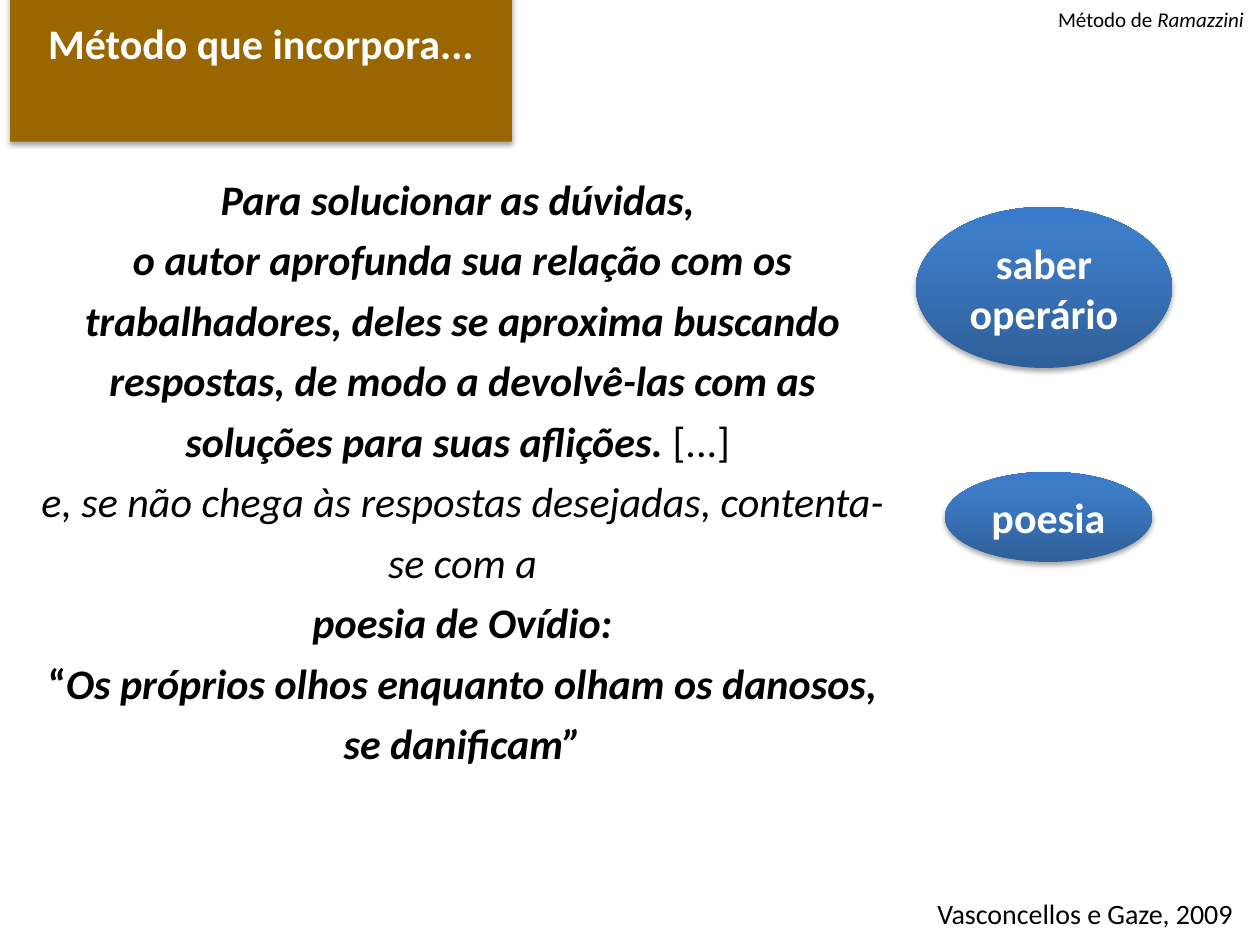
from dataclasses import dataclass

from pptx import Presentation
from pptx.dml.color import RGBColor
from pptx.enum.shapes import MSO_SHAPE
from pptx.enum.text import MSO_ANCHOR, MSO_AUTO_SIZE, PP_ALIGN
from pptx.oxml import parse_xml
from pptx.oxml.ns import nsdecls
from pptx.util import Emu, Pt


@dataclass(frozen=True)
class Theme:
    font: str = "Calibri"
    ink: str = "000000"
    on_fill: str = "FFFFFF"
    banner: str = "996600"
    gradient: tuple = ((0, "2F5F99"), (80, "3D7CC7"), (100, "3A7CCB"))
    main_size: int = 24
    source_size: int = 16
    header_size: int = 12
    line_spacing: float = 1.2
    space_after: int = 6


def px(length):
    return Emu(round(length * 914400 / 126))


class SlideBuilder:
    def __init__(self, slide, theme):
        self.slide = slide
        self.theme = theme

    def fill_text(self, frame, paragraphs, size, color, align, spacing=1.0, after=0, wrap=True):
        frame.word_wrap = wrap
        frame.auto_size = MSO_AUTO_SIZE.SHAPE_TO_FIT_TEXT
        for index, runs in enumerate(paragraphs):
            paragraph = frame.add_paragraph() if index else frame.paragraphs[0]
            paragraph.alignment = align
            paragraph.line_spacing = spacing
            paragraph.space_before = Pt(0)
            paragraph.space_after = Pt(after)
            for words, style in runs:
                run = paragraph.add_run()
                run.text = words
                run.font.name = self.theme.font
                run.font.size = Pt(size)
                run.font.color.rgb = RGBColor.from_string(color)
                run.font.bold = "b" in style
                run.font.italic = "i" in style

    def text(self, box, paragraphs, size, align=PP_ALIGN.CENTER, spacing=1.0, wrap=True):
        frame = self.slide.shapes.add_textbox(*map(px, box)).text_frame
        self.fill_text(frame, paragraphs, size, self.theme.ink, align, spacing, wrap=wrap)

    def label(self, shape, words):
        shape.line.fill.background()
        shape.element.spPr.append(parse_xml(
            f'<a:effectLst {nsdecls("a")}><a:outerShdw blurRad="39370" dist="22860" '
            'dir="5400000" rotWithShape="0"><a:srgbClr val="000000">'
            '<a:alpha val="35000"/></a:srgbClr></a:outerShdw></a:effectLst>'))
        shape.text_frame.vertical_anchor = MSO_ANCHOR.MIDDLE
        self.fill_text(shape.text_frame, [[(words, "b")]], self.theme.main_size,
                       self.theme.on_fill, PP_ALIGN.CENTER, after=self.theme.space_after)

    def title(self, box, words):
        title = self.slide.shapes.title
        title.left, title.top, title.width, title.height = map(px, box)
        title.element.spPr.append(parse_xml(
            f'<a:prstGeom {nsdecls("a")} prst="roundRect"><a:avLst/></a:prstGeom>'))
        title.fill.solid()
        title.fill.fore_color.rgb = RGBColor.from_string(self.theme.banner)
        self.label(title, words)

    def ellipse(self, box, words):
        ellipse = self.slide.shapes.add_shape(MSO_SHAPE.OVAL, *map(px, box))
        stops = "".join(f'<a:gs pos="{position * 1000}"><a:srgbClr val="{color}"/></a:gs>'
                        for position, color in self.theme.gradient)
        ellipse.element.spPr.append(parse_xml(
            f'<a:gradFill {nsdecls("a")} rotWithShape="1"><a:gsLst>{stops}</a:gsLst>'
            '<a:lin ang="16200000" scaled="0"/></a:gradFill>'))
        self.label(ellipse, words)


def main():
    presentation = Presentation()
    presentation.slide_width, presentation.slide_height = px(1260), px(945)
    theme = Theme()
    builder = SlideBuilder(presentation.slides.add_slide(presentation.slide_layouts[5]), theme)

    builder.title((10, 8, 502, 70), "Método que incorpora...")
    quotation = [
        [("Para solucionar as dúvidas, ", "bi")],
        [("o autor aprofunda sua relação com os trabalhadores, deles se aproxima "
          "buscando respostas, de modo a devolvê-las com as soluções para suas aflições. ", "bi"),
         ("[...] ", "")],
        [("e, se não chega às respostas desejadas, contenta-se com a", "i")],
        [("poesia de Ovídio:", "bi")],
        [("“", "b"), ("Os próprios olhos enquanto olham os danosos, se danificam”", "bi")],
    ]
    builder.text((29, 157, 867, 624), quotation, theme.main_size, spacing=theme.line_spacing)
    builder.text((925, 884, 325, 50), [[("Vasconcellos e Gaze, 2009", "")]],
                 theme.source_size, PP_ALIGN.LEFT, theme.line_spacing, wrap=False)
    builder.ellipse((916, 207, 256, 161), "saber operário")
    builder.ellipse((945, 472, 207, 90), "poesia")
    builder.text((1042, 0, 218, 38), [[("Método de ", ""), ("Ramazzini", "i")]],
                 theme.header_size, wrap=False)

    presentation.save("out.pptx")


if __name__ == "__main__":
    main()
